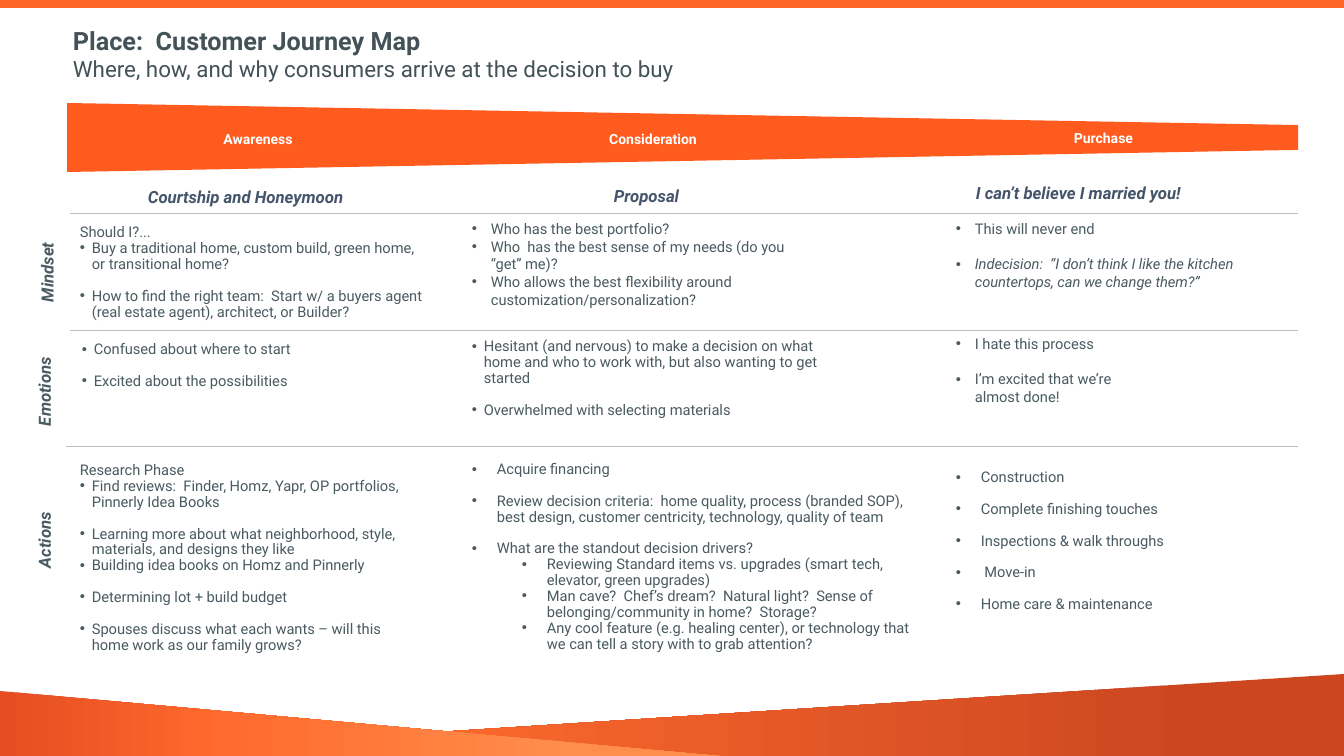
from dataclasses import dataclass

from pptx import Presentation
from pptx.dml.color import RGBColor
from pptx.enum.shapes import MSO_CONNECTOR, MSO_SHAPE
from pptx.enum.text import MSO_ANCHOR, PP_ALIGN
from pptx.oxml import parse_xml
from pptx.oxml.ns import nsdecls
from pptx.util import Emu, Pt

PX = 12192000 / 1344
FONT = "Roboto"
ORANGE, RULE, WHITE = "FF5B1E", "BFBFBF", "FFFFFF"
TITLE, HEADING, BODY = "425257", "44546A", "495A60"


def px(n):
    return Emu(round(n * PX))


def rgb(color):
    return RGBColor.from_string(color)


@dataclass
class Item:
    text: str
    level: int = 1  # 0 plain, 1 bullet, 2 nested bullet
    gap: bool = False
    italic: bool = False


class Slide:
    def __init__(self, prs):
        self.shapes = prs.slides.add_slide(prs.slide_layouts[6]).shapes

    def shape(self, kind, x, y, w, h, color=None):
        sp = self.shapes.add_shape(kind, px(x), px(y), px(w), px(h))
        sp.shadow.inherit = False
        sp.line.fill.background()
        if color:
            sp.fill.solid()
            sp.fill.fore_color.rgb = rgb(color)
        return sp

    def triangle(self, x, y, w, h, stops, flip=False):
        sp = self.shape(MSO_SHAPE.RIGHT_TRIANGLE, x, y, w, h)
        spPr = sp._element.spPr
        if flip:
            spPr.xfrm.set("flipH", "1")
        gs = "".join(f'<a:gs pos="{pos * 1000}"><a:srgbClr val="{color}"/></a:gs>'
                     for pos, color in stops)
        spPr.prstGeom.addnext(parse_xml(
            f'<a:gradFill {nsdecls("a")} rotWithShape="1"><a:gsLst>{gs}</a:gsLst>'
            '<a:lin ang="0" scaled="0"/></a:gradFill>'))

    def line(self, x1, y1, x2, y2, color, width):
        c = self.shapes.add_connector(MSO_CONNECTOR.STRAIGHT, px(x1), px(y1), px(x2), px(y2))
        c.line.color.rgb = rgb(color)
        c.line.width = Pt(width)
        c._element.spPr.append(parse_xml(f'<a:effectLst {nsdecls("a")}/>'))

    def run(self, p, text, size, color, bold=False, italic=False):
        r = p.add_run()
        r.text = text
        r.font.name, r.font.size = FONT, Pt(size)
        r.font.bold, r.font.italic = bold, italic
        r.font.color.rgb = rgb(color)

    def box(self, x, y, w, h):
        sp = self.shapes.add_textbox(px(x), px(y), px(w), px(h))
        sp.text_frame.word_wrap = True
        return sp

    def stage(self, x, y, w, h, text):
        sp = self.shape(MSO_SHAPE.RECTANGLE, x, y, w, h, ORANGE)
        tf = sp.text_frame
        tf.vertical_anchor = MSO_ANCHOR.MIDDLE
        p = tf.paragraphs[0]
        p.alignment = PP_ALIGN.CENTER
        self.run(p, text, 10, WHITE, bold=True)

    def heading(self, x, y, w, text):
        p = self.box(x, y, w, 29).text_frame.paragraphs[0]
        p.line_spacing = 0.9
        self.run(p, text, 12, HEADING, bold=True, italic=True)

    def row_label(self, x, y, text):
        sp = self.box(x, y, 188, 30)
        sp.rotation = 270
        p = sp.text_frame.paragraphs[0]
        p._p.get_or_add_pPr().set("marL", str(px(50)))
        self.run(p, text, 12, BODY, bold=True, italic=True)

    def title(self, x, y, w, h, title, subtitle):
        tf = self.box(x, y, w, h).text_frame
        self.run(tf.paragraphs[0], title, 18, TITLE, bold=True)
        self.run(tf.add_paragraph(), subtitle, 16, TITLE)

    def items(self, x, y, w, h, hang, items, spacing=0.9):
        tf = self.box(x, y, w, h).text_frame
        for i, item in enumerate(items):
            p = tf.add_paragraph() if i else tf.paragraphs[0]
            if item.level:
                pPr = p._p.get_or_add_pPr()
                pPr.set("marL", str(px(hang + 50 * (item.level - 1))))
                pPr.set("indent", str(-px(hang)))
                pPr.append(parse_xml(f'<a:buFont {nsdecls("a")} typeface="Arial"/>'))
                pPr.append(parse_xml(f'<a:buChar {nsdecls("a")} char="•"/>'))
                p.level = item.level - 1
            p.line_spacing = spacing
            if item.gap:  # one full line
                p.space_before = Pt(round(12.6 * spacing, 1))
            self.run(p, item.text, 10.5, BODY, italic=item.italic)


def main():
    prs = Presentation()
    prs.slide_width, prs.slide_height = px(1344), px(756)
    s = Slide(prs)

    # Frame: bottom triangles and top bar
    s.triangle(0, 674, 1344, 86, [(11, "CC4720"), (73, "FF6B2E"), (100, "FF8E4D")], flip=True)
    s.triangle(0, 691, 764, 69, [(0, "E54E22"), (30, "FF6B2E"), (75, "FF8E4D")])
    s.line(0, 4, 1344, 4, "FF6526", 6)

    # Narrowing stage band
    funnel = s.shape(MSO_SHAPE.TRAPEZOID, 648, -478, 69, 1231, ORANGE)
    funnel.adjustments[0] = 0.32
    funnel.rotation = 90
    s.stage(82, 125, 352, 27, "Awareness")
    s.stage(549, 125, 208, 27, "Consideration")
    s.stage(989, 129, 229, 18, "Purchase")

    # Title and column headings
    s.title(63, 20, 1164, 102, "Place:  Customer Journey Map",
            "Where, how, and why consumers arrive at the decision to buy")
    s.heading(138, 184, 258, "Courtship and Honeymoon")
    s.heading(604, 183, 208, "Proposal")
    s.heading(966, 180, 330, "I can’t believe I married you!")

    # Row rules and labels
    for x, y in ((70, 213), (70, 330), (66, 446)):
        s.line(x, y, 1298, y, RULE, 0.25)
    for x, y, text in ((-47, 253, "Mindset"), (-50, 377, "Emotions"), (-50, 519, "Actions")):
        s.row_label(x, y, text)

    # Mindset
    s.items(70, 220, 366, 123, 12, [
        Item("Should I?...", level=0),
        Item("Buy a traditional home, custom build, green home, or transitional home?"),
        Item("How to find the right team:  Start w/ a buyers agent (real estate agent), "
             "architect, or Builder?", gap=True)])
    s.items(462, 215, 352, 99, 19, [
        Item("Who has the best portfolio?"),
        Item("Who  has the best sense of my needs (do you “get” me)?"),
        Item("Who allows the best flexibility around customization/personalization?")], spacing=1.0)
    s.items(946, 215, 352, 99, 19, [
        Item("This will never end"),
        Item("Indecision:  “I don’t think I like the kitchen countertops, can we change them?”",
             gap=True, italic=True)], spacing=1.0)

    # Emotions
    s.items(72, 337, 366, 75, 12, [
        Item("Confused about where to start"),
        Item("Excited about the possibilities", gap=True)])
    s.items(462, 334, 366, 107, 12, [
        Item("Hesitant (and nervous) to make a decision on what home and who to work with, "
             "but also wanting to get started"),
        Item("Overwhelmed with selecting materials", gap=True)])
    s.items(946, 330, 222, 82, 19, [
        Item("I hate this process"),
        Item("I’m excited that we’re almost done!", gap=True)], spacing=1.0)

    # Actions
    s.items(70, 458, 339, 204, 12, [
        Item("Research Phase", level=0),
        Item("Find reviews:  Finder, Homz, Yapr, OP portfolios, Pinnerly Idea Books"),
        Item("Learning more about what neighborhood, style, materials, and designs they like",
             gap=True),
        Item("Building idea books on Homz and Pinnerly"),
        Item("Determining lot + build budget", gap=True),
        Item("Spouses discuss what each wants – will this home work as our family grows?",
             gap=True)])
    s.items(462, 457, 458, 204, 25, [
        Item("Acquire financing"),
        Item("Review decision criteria:  home quality, process (branded SOP), best design, "
             "customer centricity, technology, quality of team", gap=True),
        Item("What are the standout decision drivers?", gap=True),
        Item("Reviewing Standard items vs. upgrades (smart tech, elevator, green upgrades)",
             level=2),
        Item("Man cave?  Chef’s dream?  Natural light?  Sense of belonging/community in home?  "
             "Storage?", level=2),
        Item("Any cool feature (e.g. healing center), or technology that we can tell a story "
             "with to grab attention?", level=2)])
    finish = ("Construction", "Complete finishing touches", "Inspections & walk throughs",
              " Move-in", "Home care & maintenance")
    s.items(946, 465, 339, 197, 25, [Item(text, gap=i > 0) for i, text in enumerate(finish)])

    prs.save("out.pptx")


if __name__ == "__main__":
    main()
